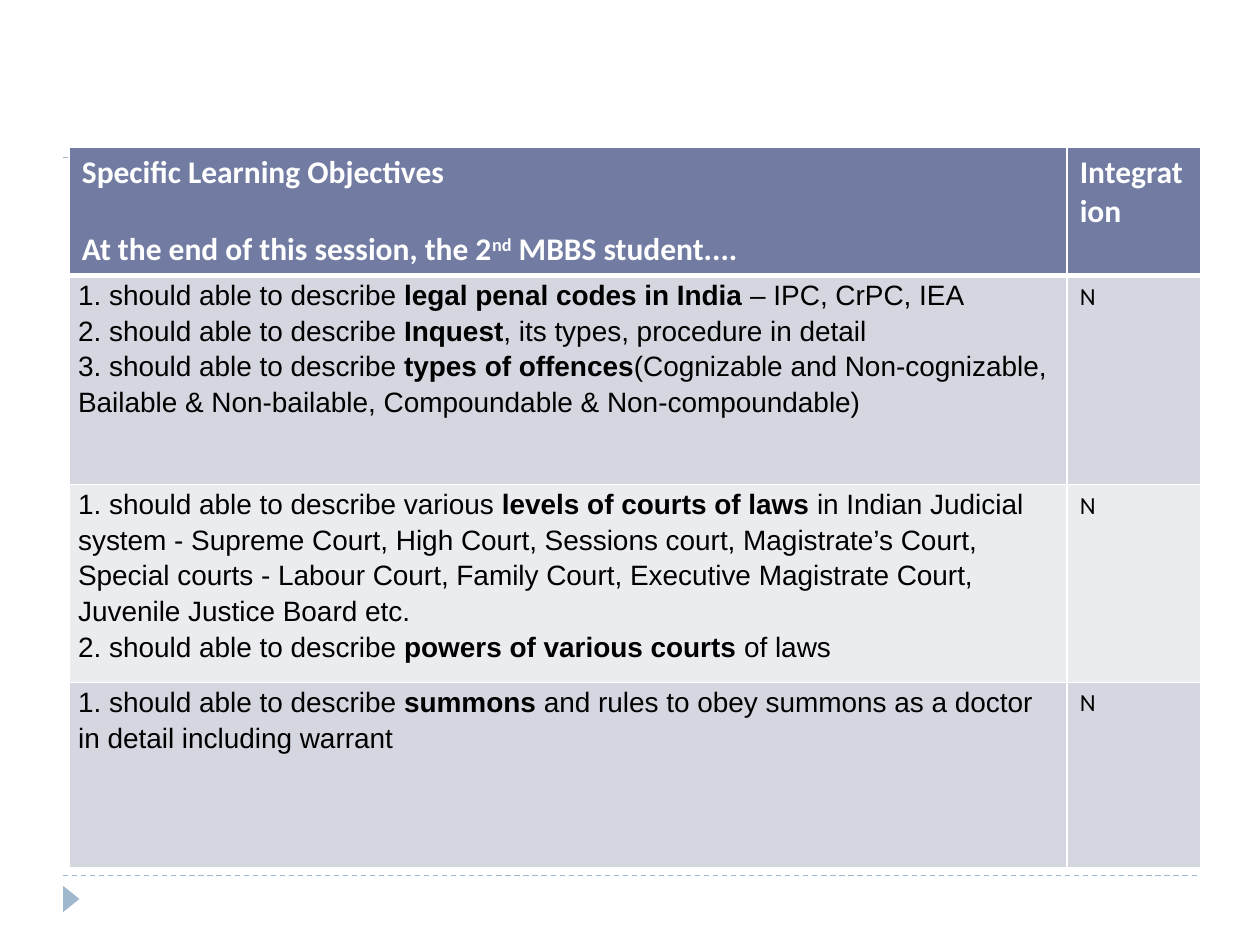
"""Build the slide with the table of learning objectives."""
import pptx
import pptx.util
import pptx.dml.color
import pptx.enum.dml
import pptx.enum.shapes
import pptx.oxml
import pptx.oxml.ns

Inches = pptx.util.Inches
Pt = pptx.util.Pt
RGBColor = pptx.dml.color.RGBColor

WHITE = RGBColor(0xFF, 0xFF, 0xFF)
BLACK = RGBColor(0x00, 0x00, 0x00)
SLATE = RGBColor(0x72, 0x7C, 0xA3)
SKY = RGBColor(0x9F, 0xB8, 0xCD)
DARK = RGBColor(0xD5, 0xD7, 0xE0)
PALE = RGBColor(0xEB, 0xEC, 0xF0)

HEAD = {"name": "Calibri", "size": Pt(18), "bold": True, "color": WHITE}
BODY = {"name": "Arial", "size": Pt(16), "bold": False, "color": BLACK}
MARK = {"name": "Calibri", "size": Pt(14), "bold": False, "color": BLACK}
TIGHT = {"margin_left": Inches(0.07), "margin_right": Inches(0.07),
         "margin_top": 0, "margin_bottom": 0}

GOALS = [
    ["1. should able to describe **legal penal codes in India **– IPC, CrPC, IEA",
     "2. should able to describe **Inquest**, its types, procedure in detail",
     "3. should able to describe **types of offences**(Cognizable and Non-cognizable, "
     "Bailable & Non-bailable, Compoundable & Non-compoundable)"],
    ["1. should able to describe various **levels of courts of laws **in Indian Judicial "
     "system - Supreme Court, High Court, Sessions court, Magistrate’s Court, "
     "Special courts - Labour Court, Family Court, Executive Magistrate Court, "
     "Juvenile Justice Board etc.",
     "2. should able to describe **powers of various courts **of laws"],
    ["1. should able to describe **summons** and rules to obey summons as a doctor "
     "in detail including warrant"],
]


def apply(item, style):
    """Set each value of a style on an item."""
    for key, value in style.items():
        setattr(item, key, value)


class Page:
    """Hold the style and the current slide."""

    def __init__(self, slide, tint):
        self.slide, self.tint = slide, tint

    def rule(self, top):
        """Draw a dashed line across the slide."""
        line = self.slide.shapes.add_connector(
            pptx.enum.shapes.MSO_CONNECTOR.STRAIGHT,
            Inches(0.5), Inches(top), Inches(9.5), Inches(top))
        line.line.color.rgb = self.tint
        apply(line.line, {"width": Pt(0.75),
                          "dash_style": pptx.enum.dml.MSO_LINE.DASH})
        props = line._element.spPr
        props.append(props.makeelement(pptx.oxml.ns.qn("a:effectLst"), {}))

    def wedge(self, left, top, width, height):
        """Draw a triangle that points right."""
        shape = self.slide.shapes.add_shape(
            pptx.enum.shapes.MSO_SHAPE.ISOSCELES_TRIANGLE,
            *map(Inches, (left, top, width, height)))
        shape.rotation = 90
        shape.shadow.inherit = False
        shape.fill.solid()
        shape.fill.fore_color.rgb = self.tint
        shape.line.fill.background()

    def table(self, left, top, cols, rows):
        """Add an empty table and return it."""
        frame = self.slide.shapes.add_table(
            len(rows), len(cols), Inches(left), Inches(top),
            Inches(sum(cols)), Inches(sum(rows)))
        for col, width in zip(frame.table.columns, cols):
            col.width = Inches(width)
        for row, height in zip(frame.table.rows, rows):
            row.height = Inches(height)
        return frame.table

    def cell(self, cell, lines, style, fill, edges, inset=None, para=None):
        """Fill a cell; double stars switch bold and carets raise text."""
        apply(cell, inset or {})
        props = cell._tc.get_or_add_tcPr()
        for side, width in zip("LRTB", edges):
            props.append(pptx.oxml.parse_xml(
                f'<a:ln{side} {pptx.oxml.ns.nsdecls("a")} w="{Pt(width)}">'
                f'<a:solidFill><a:srgbClr val="{WHITE}"/></a:solidFill></a:ln{side}>'))
        cell.fill.solid()
        cell.fill.fore_color.rgb = fill
        frame = cell.text_frame
        for num, line in enumerate(lines):
            text = frame.add_paragraph() if num else frame.paragraphs[0]
            apply(text, para or {})
            for turn, part in enumerate(line.split("**")):
                for lift, piece in enumerate(part.split("^")):
                    self.run(text, piece, style, turn % 2, lift % 2)

    def run(self, text, words, style, strong, raised):
        """Add a run of text in one format."""
        run = text.add_run()
        run.text = words
        look = dict(style)
        run.font.color.rgb = look.pop("color")
        look["bold"] = look["bold"] or bool(strong)
        apply(run.font, look)
        if raised:
            run.font._element.set("baseline", "30000")


def main():
    """Build and save the slide."""
    deck = pptx.Presentation()
    apply(deck, {"slide_width": Inches(10), "slide_height": Inches(7.5)})
    page = Page(deck.slides.add_slide(deck.slide_layouts[6]), SKY)
    for top in (6.95, 1.25):
        page.rule(top)
    page.wedge(0.46, 7.07, 0.21, 0.13)
    grid = page.table(0.55, 1.17, [7.92, 1.06], [0.99, 1.66, 1.57, 1.47])
    edges = (1, 1, 1, 3)
    page.cell(grid.cell(0, 0), ["Specific Learning Objectives"], HEAD, SLATE, edges)
    intro = grid.cell(0, 0).text_frame.add_paragraph()
    intro.space_before = Pt(22)
    for num, words in enumerate(["At the end of this session, the 2", "nd",
                                 " MBBS student...."]):
        page.run(intro, words, HEAD, True, num == 1)
    page.cell(grid.cell(0, 1), ["Integration"], HEAD, SLATE, edges)
    for row, goals in enumerate(GOALS, 1):
        fill = DARK if row % 2 else PALE
        edges = (1, 1, 3 if row == 1 else 1, 1)
        page.cell(grid.cell(row, 0), goals, BODY, fill, edges, TIGHT,
                  {"line_spacing": 1.15})
        page.cell(grid.cell(row, 1), ["N"], MARK, fill, edges)
    deck.save("out.pptx")


if __name__ == "__main__":
    main()
